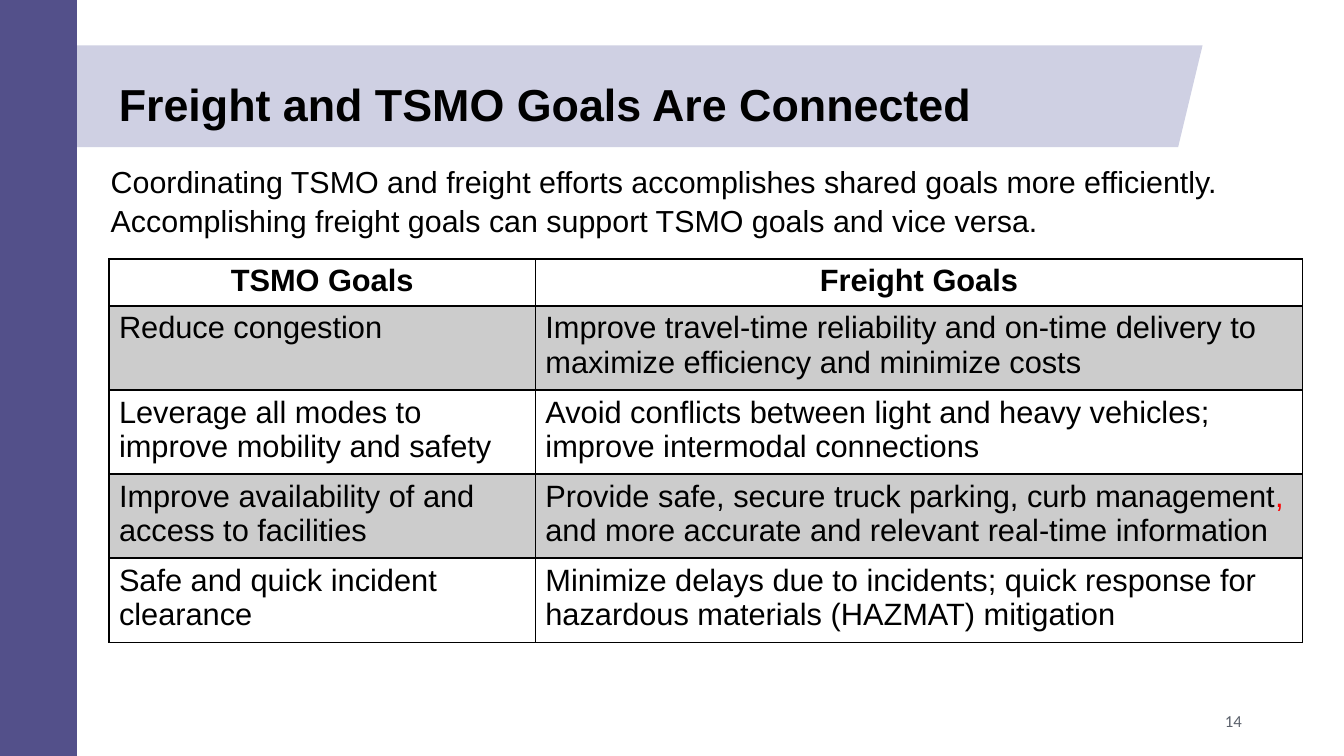
from pptx import Presentation
from pptx.dml.color import RGBColor
from pptx.enum.shapes import MSO_SHAPE
from pptx.enum.text import MSO_ANCHOR, PP_ALIGN
from pptx.oxml import parse_xml
from pptx.oxml.ns import nsdecls, qn
from pptx.util import Pt

RECT, SLANT = MSO_SHAPE.RECTANGLE, MSO_SHAPE.PARALLELOGRAM
LEFT, MID, RIGHT = PP_ALIGN.LEFT, PP_ALIGN.CENTER, PP_ALIGN.RIGHT
TOP, CENTER = MSO_ANCHOR.TOP, MSO_ANCHOR.MIDDLE
BLACK, RED, GREY = "000000", "FF0000", "5B616B"
PURPLE, LILAC = "53508A", "CFD0E3"
GOALS = [
    (["TSMO Goals"], ["Freight Goals"]),
    (["Reduce congestion"],
     ["Improve travel-time reliability and on-time delivery to "
      "maximize efficiency and minimize costs"]),
    (["Leverage all modes to improve mobility and safety"],
     ["Avoid conflicts between light and heavy vehicles; "
      "improve intermodal connections"]),
    (["Improve availability of and access to facilities"],
     ["Provide safe, secure truck parking, curb management", ",",
      " and more accurate and relevant real-time information"]),
    (["Safe and quick incident clearance"],
     ["Minimize delays due to incidents; quick response for "
      "hazardous materials (HAZMAT) mitigation"]),
]


def color(text):
    """Turn a hex string into a colour."""
    return RGBColor.from_string(text)


def style(para, size, bold=False, align=LEFT, face="Arial", tint=BLACK):
    """Set the font and alignment of a paragraph."""
    para.alignment = align
    font = para.font
    font.name, font.size, font.bold = face, Pt(size), bold
    font.color.rgb = color(tint)


def add_block(slide, kind, box, fill):
    """Draw a plain filled shape."""
    block = slide.shapes.add_shape(kind, *map(Pt, box))
    block.shadow.inherit = False
    block.fill.solid()
    block.fill.fore_color.rgb = color(fill)
    block.line.fill.background()
    return block


def add_text(slide, box, text, size, space=1.0, anchor=TOP, **look):
    """Write one paragraph in a wrapping box."""
    frame = slide.shapes.add_textbox(*map(Pt, box)).text_frame
    frame.word_wrap = True
    frame.vertical_anchor = anchor
    para = frame.paragraphs[0]
    para.text = text
    para.line_spacing = space
    style(para, size, **look)


def add_edge(cell, side, width):
    """Draw one black border of a cell."""
    cell._tc.get_or_add_tcPr().append(parse_xml(
        f'<a:ln{side} {nsdecls("a")} w="{Pt(width)}"><a:solidFill>'
        f'<a:srgbClr val="{BLACK}"/></a:solidFill></a:ln{side}>'))


def fill_cell(cell, parts, row):
    """Write and format a cell by its row."""
    head = row == 0
    para = cell.text_frame.paragraphs[0]
    style(para, 22, bold=head, align=MID if head else LEFT)
    for spot, part in enumerate(parts):
        run = para.add_run()
        run.text = part
        if spot == 1:
            run.font.color.rgb = color(RED)
    thick = {"L": 1, "R": 1, "T": 2 if row == 1 else 1, "B": 2 if head else 1}
    for side, width in thick.items():
        add_edge(cell, side, width)
    if row % 2:
        cell.fill.solid()
        cell.fill.fore_color.rgb = color(BLACK)
        shade = cell._tc.tcPr.find(qn("a:solidFill"))[0]
        shade.append(parse_xml(f'<a:alpha {nsdecls("a")} val="20000"/>'))
    else:
        cell.fill.background()


def add_goals(slide, left, top, widths, heights):
    """Build the table of paired goals."""
    table = slide.shapes.add_table(
        len(heights), len(widths), Pt(left), Pt(top),
        Pt(sum(widths)), Pt(sum(heights))).table
    table.first_row = table.horz_banding = False
    for col, width in zip(table.columns, widths):
        col.width = Pt(width)
    for row, (pair, height) in enumerate(zip(GOALS, heights)):
        table.rows[row].height = Pt(height)
        for col, parts in enumerate(pair):
            fill_cell(table.cell(row, col), parts, row)


def main():
    """Build and save the slide."""
    deck = Presentation()
    deck.slide_width, deck.slide_height = Pt(960), Pt(540)
    slide = deck.slides.add_slide(deck.slide_layouts[6])
    band = add_block(slide, SLANT, (17.3, 32.4, 841.7, 72.7), LILAC)
    band.adjustments[0] = 0.24
    add_block(slide, RECT, (0, 0, 54.9, 540), PURPLE)
    add_text(slide, (77.8, 55.4, 708.5, 39.6),
             "Freight and TSMO Goals Are Connected", 32, 0.9, bold=True)
    add_text(slide, (72, 111.6, 853.2, 72.7),
             "Coordinating TSMO and freight efforts accomplishes shared goals "
             "more efficiently. Accomplishing freight goals can support TSMO "
             "goals and vice versa.", 21.7, 1.06)
    add_goals(slide, 77.8, 185, (304.6, 548), [32] + [56.4] * 4)
    add_text(slide, (678.2, 500.4, 216, 28.8), "14", 12, anchor=CENTER,
             align=RIGHT, face="Calibri", tint=GREY)
    deck.save("out.pptx")


if __name__ == "__main__":
    main()
